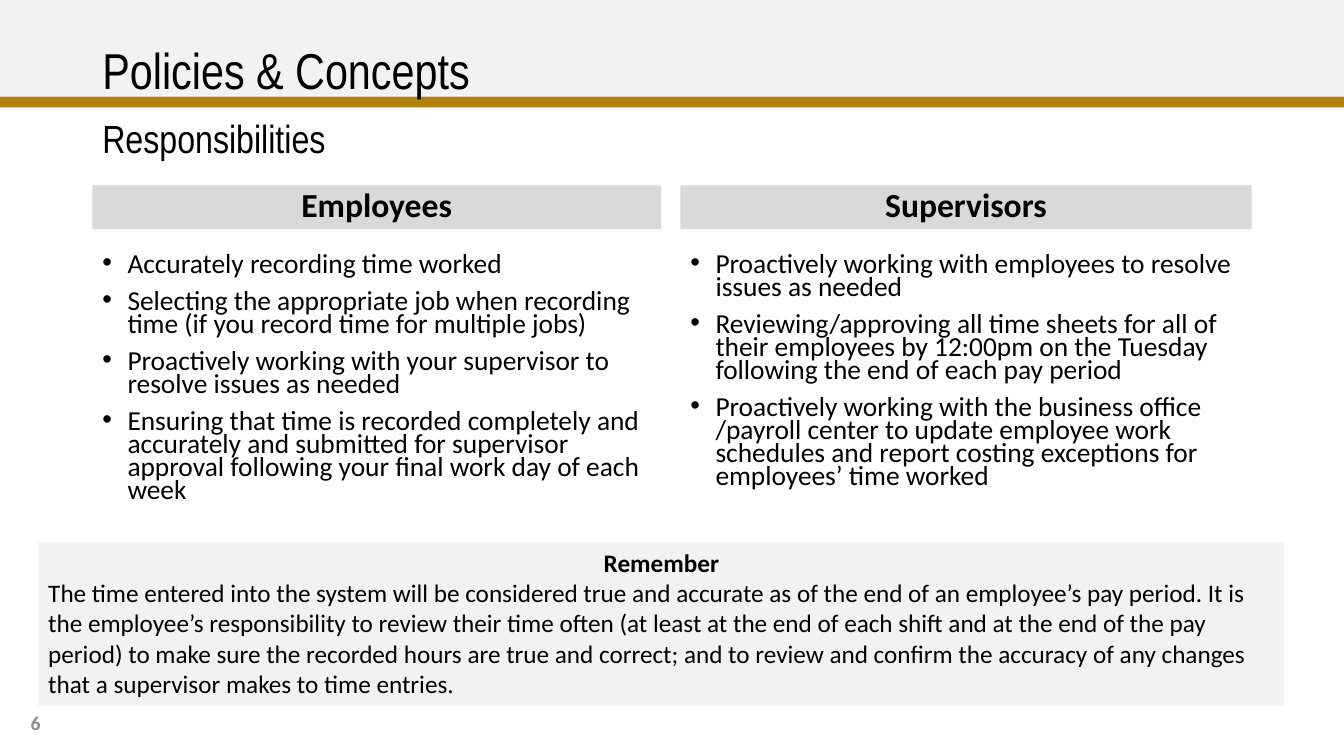
from dataclasses import dataclass

from lxml.etree import SubElement
from pptx import Presentation
from pptx.dml.color import RGBColor
from pptx.enum.shapes import MSO_SHAPE
from pptx.enum.text import MSO_ANCHOR, PP_ALIGN
from pptx.oxml.ns import qn
from pptx.util import Inches, Pt


@dataclass(frozen=True)
class Theme:
    heading_font: str = "Arial Narrow"
    body_font: str = "Calibri"
    text: str = "000000"
    gold: str = "B1810B"
    pale: str = "F2F2F2"
    header: str = "D9D9D9"
    muted: str = "8C8C8C"
    title_size: float = 36
    subtitle_size: float = 28
    header_size: float = 24
    bullet_size: float = 19.6
    note_size: float = 18
    number_size: float = 14


THEME = Theme()
GRID_COLUMNS = 160
GRID_ROWS = 90
SLIDE_WIDTH = Inches(13.33)
SLIDE_HEIGHT = Inches(7.5)
LEFT = 11
CONTENT_WIDTH = 138

DUTIES = [
    ("Employees", LEFT, 67.7, [
        "Accurately recording time worked",
        "Selecting the appropriate job when recording time (if you record time for multiple jobs)",
        "Proactively working with your supervisor to resolve issues as needed",
        "Ensuring that time is recorded completely and accurately and submitted for supervisor "
        "approval following your final work day of each week",
    ]),
    ("Supervisors", 81, 68, [
        "Proactively working with employees to resolve issues as needed",
        "Reviewing/approving all time sheets for all of their employees by 12:00pm on the Tuesday "
        "following the end of each pay period",
        "Proactively working with the business office /payroll center to update employee work "
        "schedules and report costing exceptions for employees’ time worked",
    ]),
]

REMINDER = (
    "The time entered into the system will be considered true and accurate as of the end of an "
    "employee’s pay period. It is the employee’s responsibility to review their time often (at "
    "least at the end of each shift and at the end of the pay period) to make sure the recorded "
    "hours are true and correct; and to review and confirm the accuracy of any changes that a "
    "supervisor makes to time entries."
)


def place(column, row, columns, rows):
    across = SLIDE_WIDTH / GRID_COLUMNS
    down = SLIDE_HEIGHT / GRID_ROWS
    return round(column * across), round(row * down), round(columns * across), round(rows * down)


def add_panel(slide, area, color):
    panel = slide.shapes.add_shape(MSO_SHAPE.RECTANGLE, *place(*area))
    panel.shadow.inherit = False
    panel.fill.solid()
    panel.fill.fore_color.rgb = RGBColor.from_string(color)
    panel.line.fill.background()
    return panel


def add_text_box(slide, area):
    return slide.shapes.add_textbox(*place(*area))


def add_bullet(paragraph):
    properties = paragraph._p.get_or_add_pPr()
    properties.set("marL", str(Inches(0.25)))
    properties.set("indent", str(-Inches(0.25)))
    SubElement(properties, qn("a:buFont")).set("typeface", "Arial")
    SubElement(properties, qn("a:buChar")).set("char", "•")


def write(shape, texts, size, font=THEME.body_font, color=THEME.text, bold=False,
          align=PP_ALIGN.LEFT, anchor=MSO_ANCHOR.TOP, spacing=1.0, gap=0, bullets=False):
    frame = shape.text_frame
    frame.word_wrap = True
    frame.vertical_anchor = anchor
    for index, text in enumerate(texts):
        paragraph = frame.add_paragraph() if index else frame.paragraphs[0]
        paragraph.text = text
        paragraph.alignment = align
        paragraph.line_spacing = spacing
        if index:
            paragraph.space_before = Pt(gap)
        if bullets:
            add_bullet(paragraph)
        paragraph.font.name = font
        paragraph.font.size = Pt(size)
        paragraph.font.bold = bold
        paragraph.font.color.rgb = RGBColor.from_string(color)


def add_duties(slide, heading, column, columns, duties):
    header = add_panel(slide, (column, 22.08, columns, 5.2), THEME.header)
    write(header, [heading], THEME.header_size, bold=True,
          align=PP_ALIGN.CENTER, anchor=MSO_ANCHOR.BOTTOM)
    duty_list = add_text_box(slide, (column, 29.8, columns, 34.8))
    write(duty_list, duties, THEME.bullet_size, spacing=0.7, gap=10, bullets=True)


def add_reminder(slide):
    panel = add_panel(slide, (4.56, 64.56, 148.36, 19.44), THEME.pale)
    write(panel, ["Remember", REMINDER], THEME.note_size)
    heading = panel.text_frame.paragraphs[0]
    heading.alignment = PP_ALIGN.CENTER
    heading.font.bold = True


def main():
    presentation = Presentation()
    presentation.slide_width = SLIDE_WIDTH
    presentation.slide_height = SLIDE_HEIGHT
    slide = presentation.slides.add_slide(presentation.slide_layouts[6])

    add_panel(slide, (0, 11.5, GRID_COLUMNS, 1.3), THEME.gold)
    add_panel(slide, (0, 0, GRID_COLUMNS, 11.4), THEME.pale)

    for heading, column, columns, duties in DUTIES:
        add_duties(slide, heading, column, columns, duties)

    title = add_text_box(slide, (LEFT, 4.8, CONTENT_WIDTH, 7.9))
    write(title, ["Policies & Concepts"], THEME.title_size, THEME.heading_font,
          anchor=MSO_ANCHOR.MIDDLE, spacing=0.9)
    subtitle = add_text_box(slide, (LEFT, 13.7, CONTENT_WIDTH, 4.8))
    write(subtitle, ["Responsibilities"], THEME.subtitle_size, THEME.heading_font, spacing=0.9)

    number = add_text_box(slide, (0, 83.64, 6, 4.8))
    write(number, ["6"], THEME.number_size, color=THEME.muted, bold=True,
          align=PP_ALIGN.RIGHT, anchor=MSO_ANCHOR.MIDDLE)
    add_reminder(slide)

    presentation.save("out.pptx")


if __name__ == "__main__":
    main()
